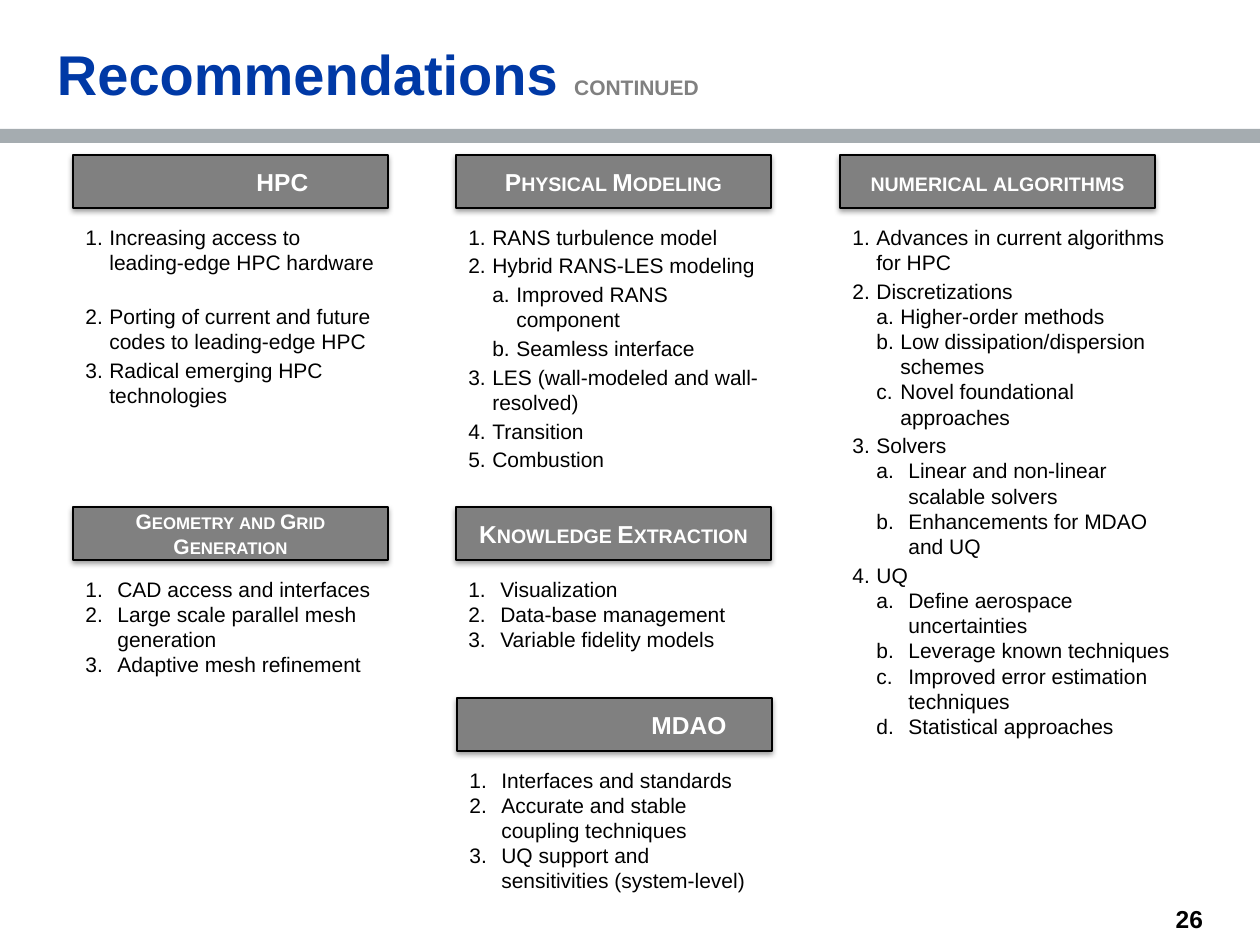
"""Builds the continued recommendations slide with numbered lists under headed blocks."""
from lxml.etree import SubElement
from pptx import Presentation
from pptx.dml.color import RGBColor
from pptx.enum.shapes import MSO_SHAPE as Preset
from pptx.enum.text import MSO_ANCHOR as Anchor, MSO_AUTO_SIZE as AutoSize, PP_ALIGN as Align
from pptx.oxml.ns import qn
from pptx.util import Pt

SCALE = 914400 / 126
COLORS = {
    "title": "0039A6",
    "gray": "808080",
    "bar": "A5ACB0",
    "black": "000000",
    "white": "FFFFFF",
}
HEADING_WIDTH, HEADING_HEIGHT, LIST_OFFSET = 315, 53, 63
LEFT, MIDDLE, RIGHT = 73, 456, 840
TOP, CENTER, BOTTOM = 155, 507, 698

STYLES = {
    "first": (0, 24, 24, 0),
    "item": (0, 24, 24, 2),
    "apart": (0, 24, 24, 16.5),
    "wide": (0, 32, 32, 0),
    "sub": (1, 48, 24, 0),
    "spaced sub": (1, 48, 24, 2),
    "wide sub": (1, 56, 32, 0),
}
BLOCKS = [
    (LEFT, TOP, "HPC", 14, 52, 315, 173, [
        ("item", "Increasing access to leading-edge HPC hardware"),
        ("apart", "Porting of current and future codes to leading-edge HPC"),
        ("item", "Radical emerging HPC technologies"),
    ]),
    (MIDDLE, TOP, "Physical Modeling", 14, 0, 315, 263, [
        ("item", "RANS turbulence model"),
        ("item", "Hybrid RANS-LES modeling"),
        ("spaced sub", "Improved RANS component"),
        ("spaced sub", "Seamless interface"),
        ("item", "LES (wall-modeled and wall-resolved)"),
        ("item", "Transition"),
        ("item", "Combustion"),
    ]),
    (RIGHT, TOP, "numerical algorithms", 14, 0, 347, 532, [
        ("first", "Advances in current algorithms for HPC"),
        ("item", "Discretizations"),
        ("sub", "Higher-order methods"),
        ("sub", "Low dissipation/dispersion schemes"),
        ("sub", "Novel foundational approaches"),
        ("item", "Solvers"),
        ("wide sub", "Linear and non-linear scalable solvers"),
        ("wide sub", "Enhancements for MDAO and UQ"),
        ("item", "UQ"),
        ("wide sub", "Define aerospace uncertainties"),
        ("wide sub", "Leverage known techniques"),
        ("wide sub", "Improved error estimation techniques"),
        ("wide sub", "Statistical approaches"),
    ]),
    (LEFT, CENTER, "Geometry and Grid Generation", 12, 0, 315, 165, [
        ("wide", "CAD access and interfaces"),
        ("wide", "Large scale parallel mesh generation"),
        ("wide", "Adaptive mesh refinement"),
    ]),
    (MIDDLE, CENTER, "Knowledge Extraction", 14, 0, 315, 89, [
        ("wide", "Visualization"),
        ("wide", "Data-base management"),
        ("wide", "Variable fidelity models"),
    ]),
    (MIDDLE + 1, BOTTOM, "MDAO", 14, 74, 315, 140, [
        ("wide", "Interfaces and standards"),
        ("wide", "Accurate and stable coupling techniques"),
        ("wide", "UQ support and sensitivities (system-level)"),
    ]),
]


def px(*lengths):
    return [round(length * SCALE) for length in lengths]


def format_run(run, size, color, bold=False):
    run.font.name = "Arial"
    run.font.size = Pt(size)
    run.font.bold = bold
    run.font.color.rgb = RGBColor.from_string(COLORS[color])


presentation = Presentation()
presentation.slide_width, presentation.slide_height = px(1260, 945)
slide = presentation.slides.add_slide(presentation.slide_layouts[6])

bar = slide.shapes.add_shape(Preset.RECTANGLE, *px(0, 129, 1260, 14))
bar.shadow.inherit = False
bar.fill.solid()
bar.fill.fore_color.rgb = RGBColor.from_string(COLORS["bar"])
bar.line.fill.background()

title = slide.shapes.add_textbox(*px(57, 48, 1144, 60))
number = slide.shapes.add_textbox(*px(958, 900, 246, 34))
for box, inset in ((title, 0), (number, 1)):
    frame = box.text_frame
    frame.word_wrap = True
    frame.vertical_anchor = Anchor.BOTTOM
    frame.margin_left, frame.margin_top, frame.margin_right, frame.margin_bottom = px(*[inset] * 4)

paragraph = title.text_frame.paragraphs[0]
paragraph.line_spacing = 0.9
for text, size, color in (("Recommendations ", 32, "title"), ("CONTINUED", 12, "gray")):
    run = paragraph.add_run()
    run.text = text
    format_run(run, size, color, bold=True)

paragraph = number.text_frame.paragraphs[0]
paragraph.text = "26"
paragraph.alignment = Align.RIGHT
format_run(paragraph.runs[0], 14, "black", bold=True)

for left, top, name, size, indent, list_width, list_height, items in BLOCKS:
    heading = slide.shapes.add_shape(Preset.RECTANGLE, *px(left, top, HEADING_WIDTH, HEADING_HEIGHT))
    heading.fill.solid()
    heading.fill.fore_color.rgb = RGBColor.from_string(COLORS["gray"])
    heading.line.color.rgb = RGBColor.from_string(COLORS["black"])
    heading.line.width = Pt(0.75)
    heading.shadow.inherit = False
    effects = heading._element.spPr.find(qn("a:effectLst"))
    shadow = SubElement(effects, qn("a:outerShdw"), blurRad=str(Pt(3.1)), dist=str(Pt(1.6)),
                        dir="5400000", rotWithShape="0")
    shadow_color = SubElement(shadow, qn("a:srgbClr"), val=COLORS["black"])
    SubElement(shadow_color, qn("a:alpha"), val="38000")
    heading.text_frame.text = name
    heading.text_frame.word_wrap = True
    heading.text_frame.vertical_anchor = Anchor.MIDDLE
    paragraph = heading.text_frame.paragraphs[0]
    paragraph.alignment = Align.CENTER
    paragraph._p.get_or_add_pPr().set("marL", str(px(indent)[0]))
    format_run(paragraph.runs[0], size, "white", bold=True)
    paragraph.runs[0]._r.get_or_add_rPr().set("cap", "small")

    body = slide.shapes.add_textbox(*px(left, top + LIST_OFFSET, list_width, list_height))
    frame = body.text_frame
    frame.word_wrap = True
    frame.auto_size = AutoSize.SHAPE_TO_FIT_TEXT
    frame.text = "\n".join(text for _, text in items)
    for paragraph, (style, _) in zip(frame.paragraphs, items):
        level, margin, hanging, space = STYLES[style]
        paragraph.level = level
        paragraph.space_before = Pt(space)
        properties = paragraph._p.get_or_add_pPr()
        properties.set("marL", str(px(margin)[0]))
        properties.set("indent", str(px(-hanging)[0]))
        SubElement(properties, qn("a:buFont"), typeface="+mj-lt")
        SubElement(properties, qn("a:buAutoNum"), type=("arabicPeriod", "alphaLcPeriod")[level])
        format_run(paragraph.runs[0], 12, "black")

presentation.save("out.pptx")
